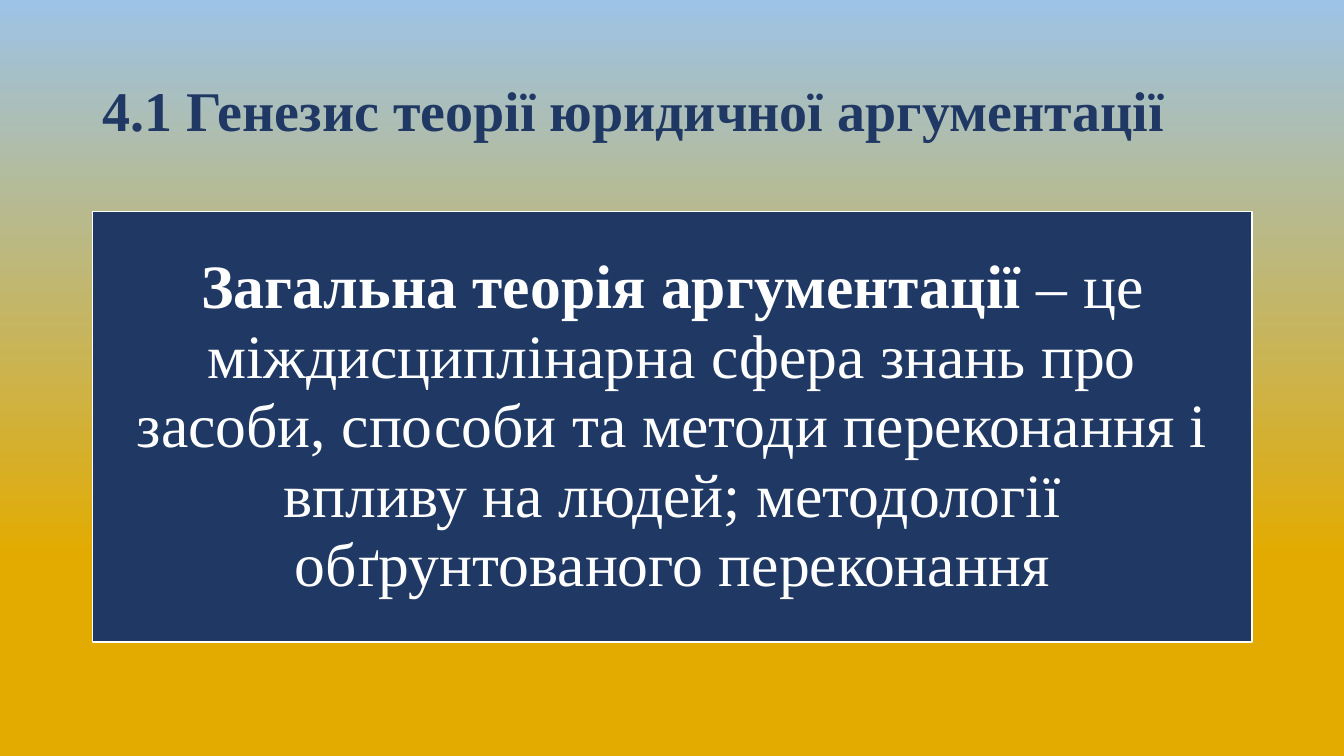
"""Build a slide defining the general theory of argumentation."""
from pptx import Presentation
from pptx.dml.color import RGBColor
from pptx.enum.shapes import MSO_SHAPE
from pptx.enum.text import MSO_ANCHOR, PP_ALIGN
from pptx.util import Inches, Pt

COLORS = {"navy": "203864", "white": "FFFFFF", "gold": "E3AB00", "sky": "9DC3E6"}
FONT = "Times New Roman"
LEFT, WIDTH = Inches(0.92), Inches(11.5)


def color(name):
    return RGBColor.from_string(COLORS[name])


def add_span(para, text, size, color_name, bold):
    span = para.add_run()
    span.text = text
    span.font.name = FONT
    span.font.size = Pt(size)
    span.font.bold = bold
    span.font.color.rgb = color(color_name)


deck = Presentation()
deck.slide_width, deck.slide_height = Inches(13.33), Inches(7.5)
page = deck.slides.add_slide(deck.slide_layouts[6])

background = page.background.fill
background.gradient()
background.gradient_angle = 90
for stop, name, position in zip(background.gradient_stops, ("gold", "sky"), (0.26, 1)):
    stop.color.rgb = color(name)
    stop.position = position

title_box = page.shapes.add_textbox(LEFT, Inches(0.4), WIDTH, Inches(1.45))
title_frame = title_box.text_frame
title_frame.word_wrap = True
title_frame.vertical_anchor = MSO_ANCHOR.MIDDLE
title_para = title_frame.paragraphs[0]
title_para.line_spacing = 0.9
add_span(title_para, "4.1 Генезис теорії юридичної аргументації", 40, "navy", True)

definition_box = page.shapes.add_shape(MSO_SHAPE.RECTANGLE, LEFT, Inches(2.1), WIDTH, Inches(4.27))
definition_box.shadow.inherit = False
definition_box.fill.solid()
definition_box.fill.fore_color.rgb = color("navy")
definition_box.line.color.rgb = color("white")
definition_box.line.width = Pt(1)

definition_frame = definition_box.text_frame
definition_frame.word_wrap = True
definition_frame.vertical_anchor = MSO_ANCHOR.MIDDLE
definition_frame.margin_left = definition_frame.margin_right = Inches(0.34)
definition_frame.margin_top = definition_frame.margin_bottom = Inches(0.34)
definition_para = definition_frame.paragraphs[0]
definition_para.alignment = PP_ALIGN.CENTER
definition_para.line_spacing = 0.94
add_span(definition_para, "Загальна теорія аргументації ", 44, "white", True)
add_span(
    definition_para,
    "– це міждисциплінарна сфера знань про засоби, способи та методи переконання "
    "і впливу на людей; методології обґрунтованого переконання",
    44, "white", False,
)

deck.save("out.pptx")
